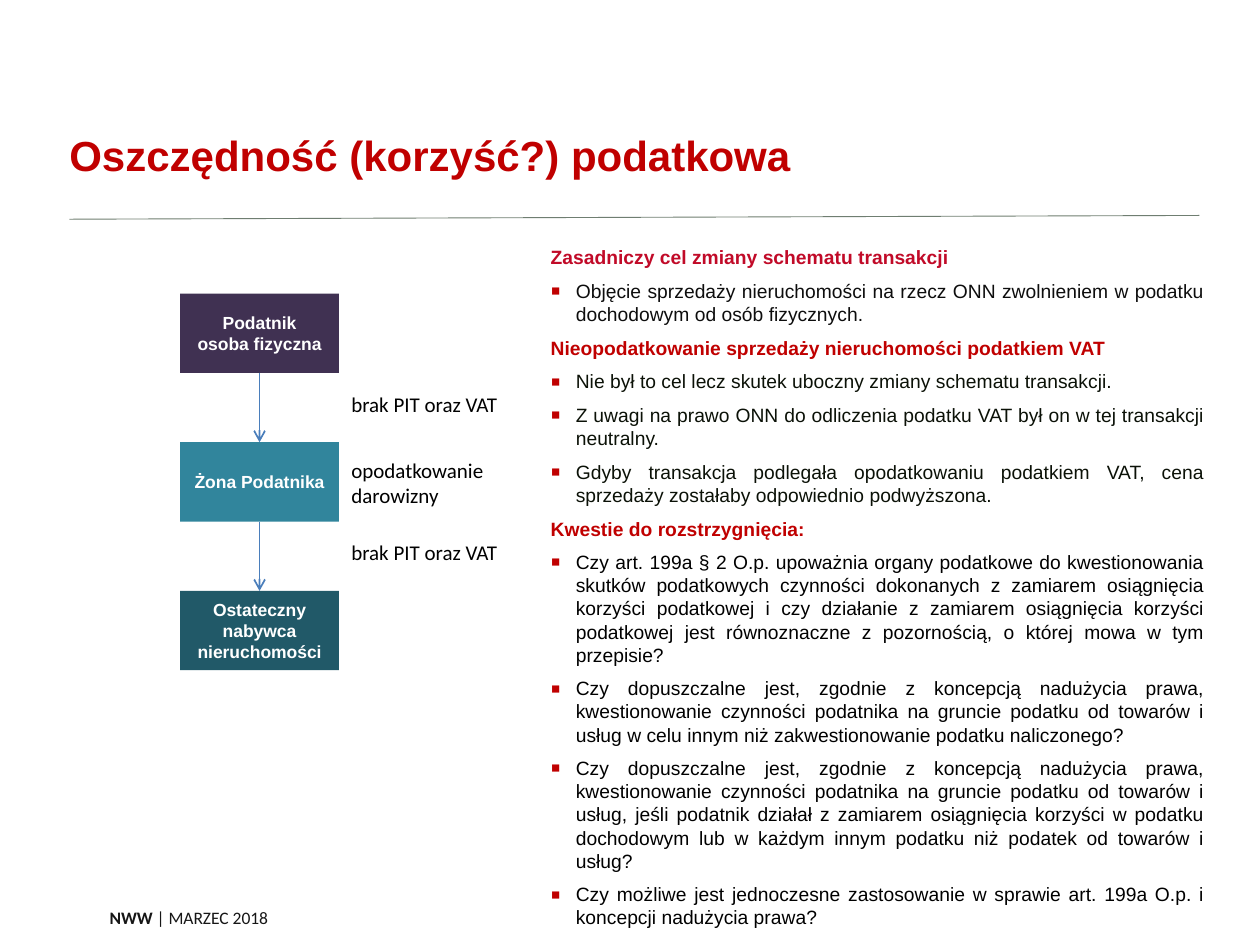
import pptx
import pptx.util
import pptx.dml.color
import pptx.enum.shapes
import pptx.enum.text
import pptx.oxml
import pptx.oxml.ns

Inches = pptx.util.Inches
Pt = pptx.util.Pt
RGB = pptx.dml.color.RGBColor
ALIGN = pptx.enum.text.PP_ALIGN
ANCHOR = pptx.enum.text.MSO_ANCHOR
FIT = pptx.enum.text.MSO_AUTO_SIZE

RED = RGB(0xC0, 0x00, 0x00)
CRIMSON = RGB(0xC1, 0x0A, 0x28)
BLACK = RGB(0x00, 0x00, 0x00)
SOOT = RGB(0x0D, 0x0D, 0x0D)
MOSS = RGB(0x0B, 0x11, 0x07)
INK = RGB(0x16, 0x16, 0x16)
WHITE = RGB(0xFF, 0xFF, 0xFF)
GREY = RGB(0x6F, 0x7E, 0x71)
BLUE = RGB(0x4A, 0x7E, 0xBB)
PLUM = RGB(0x40, 0x31, 0x52)
TEAL = RGB(0x31, 0x85, 0x9C)
PETROL = RGB(0x21, 0x59, 0x68)

HEAD = {"name": "Arial", "size": Pt(24), "bold": True}
TOPIC = {"name": "Arial", "size": Pt(11), "bold": True}
ITEM = {"name": "Arial", "size": Pt(11), "bold": False}
NODE = {"name": "Arial", "size": Pt(10), "bold": True}
LABEL = {"name": "Calibri", "size": Pt(12), "bold": False}
FOOT = {"name": "Calibri", "size": Pt(10), "bold": False}
BARE = {"margin_left": 0, "margin_right": 0, "margin_top": 0, "margin_bottom": 0}
FLAT = {"word_wrap": True, "auto_size": FIT.NONE, "vertical_anchor": ANCHOR.TOP}

# Each topic: heading, heading colour, item colour, items
TOPICS = [
    ("Zasadniczy cel zmiany schematu transakcji", CRIMSON, SOOT, [
        "Objęcie sprzedaży nieruchomości na rzecz ONN zwolnieniem w podatku "
        "dochodowym od osób fizycznych."]),
    ("Nieopodatkowanie sprzedaży nieruchomości podatkiem VAT", RED, MOSS, [
        "Nie był to cel lecz skutek uboczny zmiany schematu transakcji.",
        "Z uwagi na prawo ONN do odliczenia podatku VAT był on w tej transakcji "
        "neutralny.",
        "Gdyby transakcja podlegała opodatkowaniu podatkiem VAT, cena sprzedaży "
        "zostałaby odpowiednio podwyższona."]),
    ("Kwestie do rozstrzygnięcia:", RED, BLACK, [
        "Czy art. 199a § 2 O.p. upoważnia organy podatkowe do kwestionowania skutków "
        "podatkowych czynności dokonanych z zamiarem osiągnięcia korzyści podatkowej "
        "i czy działanie z zamiarem osiągnięcia korzyści podatkowej jest równoznaczne "
        "z pozornością, o której mowa w tym przepisie?",
        "Czy dopuszczalne jest, zgodnie z koncepcją nadużycia prawa, kwestionowanie "
        "czynności podatnika na gruncie podatku od towarów i usług w celu innym niż "
        "zakwestionowanie podatku naliczonego?",
        "Czy dopuszczalne jest, zgodnie z koncepcją nadużycia prawa, kwestionowanie "
        "czynności podatnika na gruncie podatku od towarów i usług, jeśli podatnik "
        "działał z zamiarem osiągnięcia korzyści w podatku dochodowym lub w każdym "
        "innym podatku niż podatek od towarów i usług?",
        "Czy możliwe jest jednoczesne zastosowanie w sprawie art. 199a O.p. i "
        "koncepcji nadużycia prawa?"]),
]
NODES = [("Podatnik\nosoba fizyczna", PLUM), ("Żona Podatnika", TEAL),
         ("Ostateczny nabywca nieruchomości", PETROL)]
# Each label: offset from the chart top, width, height, text
LABELS = [(0.73, 1.64, 0.3, "brak PIT oraz VAT"),
          (1.25, 1.43, 0.5, "opodatkowanie darowizny"),
          (1.9, 1.64, 0.3, "brak PIT oraz VAT")]


def dress(part, form):
    for key, val in form.items():
        setattr(part, key, val)


def place(shape, box):
    keys = ("left", "top", "width", "height")
    dress(shape, dict(zip(keys, map(Inches, box))))


def write(para, text, form, color):
    run = para.add_run()
    run.text = text
    dress(run.font, form)
    run.font.color.rgb = color


def node(parent, tag, **attrs):
    """Append a drawing element to parent."""
    item = pptx.oxml.parse_xml(f"<a:{tag} {pptx.oxml.ns.nsdecls('a')}/>")
    for key, val in attrs.items():
        item.set(key, val)
    parent.append(item)
    return item


def rule(slide, ends, color, width, arrow=False):
    kind = pptx.enum.shapes.MSO_CONNECTOR.STRAIGHT
    line = slide.shapes.add_connector(kind, *map(Inches, ends))
    line.line.color.rgb = color
    line.line.width = Pt(width)
    if arrow:
        node(line.line._get_or_add_ln(), "tailEnd", type="arrow")
    node(line._element.spPr, "effectLst")


def label(slide, box, runs, frame=None):
    """Add a text box; runs holds (text, form, color)."""
    text = slide.shapes.add_textbox(*map(Inches, box)).text_frame
    dress(text, {**FLAT, **(frame or {})})
    for part in runs:
        write(text.paragraphs[0], *part)


def title(slide, box):
    shape = slide.shapes.title
    place(shape, box)
    dress(shape.text_frame, {**FLAT, **BARE})
    para = shape.text_frame.paragraphs[0]
    para.alignment = ALIGN.LEFT
    write(para, "Oszczędność (korzyść?) podatkowa", HEAD, RED)


def bullet(para, on):
    prop = para._p.get_or_add_pPr()
    step = Inches(0.2) if on else 0
    prop.set("marL", str(step))
    prop.set("indent", str(-step))
    if on:
        node(node(prop, "buClr"), "srgbClr", val=str(RED))
        node(prop, "buSzPct", val="150000")
        node(prop, "buFont", typeface="Arial")
        node(prop, "buChar", char="▪")
    else:
        node(prop, "buNone")


def body(slide, box):
    shape = slide.placeholders[1]
    place(shape, box)
    frame = shape.text_frame
    dress(frame, FLAT)
    rows = []
    for head, tone, ink, items in TOPICS:
        rows.append((head, TOPIC, tone))
        rows += [(item, ITEM, ink) for item in items]
    for i, row in enumerate(rows):
        para = frame.add_paragraph() if i else frame.paragraphs[0]
        dress(para, {"alignment": ALIGN.JUSTIFY, "space_before": Pt(0),
                     "space_after": Pt(6)})
        bullet(para, row[1] is ITEM)
        write(para, *row)


def flow(slide, box):
    """Stack the nodes evenly, join them and label the steps on the right."""
    left, top, width, height = box
    tall = 0.63
    step = (height - tall) / (len(NODES) - 1)
    mid = left + width / 2
    for i, (text, fill) in enumerate(NODES):
        y = top + i * step
        shape = slide.shapes.add_shape(pptx.enum.shapes.MSO_SHAPE.RECTANGLE,
                                       *map(Inches, (left, y, width, tall)))
        shape.shadow.inherit = False
        shape.fill.solid()
        shape.fill.fore_color.rgb = fill
        shape.line.fill.background()
        frame = shape.text_frame
        dress(frame, {"word_wrap": True, "vertical_anchor": ANCHOR.MIDDLE})
        for j, line in enumerate(text.split("\n")):
            para = frame.add_paragraph() if j else frame.paragraphs[0]
            para.alignment = ALIGN.CENTER
            write(para, line, NODE, WHITE)
        if i:
            rule(slide, (mid, y - step + tall, mid, y), BLUE, 1, True)
    for drop, wide, high, text in LABELS:
        label(slide, (left + width, top + drop, wide, high), [(text, LABEL, BLACK)])


def footer(slide, box):
    label(slide, box, [("NWW ", {**FOOT, "bold": True}, INK),
                       ("| MARZEC 2018", FOOT, INK)], BARE)


def main():
    deck = pptx.Presentation()
    dress(deck, {"slide_width": Inches(10), "slide_height": Inches(7.5)})
    slide = deck.slides.add_slide(deck.slide_layouts[1])
    body(slide, (4.27, 1.9, 5.39, 5.57))
    rule(slide, (0.55, 1.74, 9.52, 1.71), GREY, 0.5)
    title(slide, (0.55, 1.03, 9.24, 0.4))
    flow(slide, (1.43, 2.33, 1.26, 2.99))
    footer(slide, (0.87, 7.2, 3.94, 0.2))
    deck.save("out.pptx")


if __name__ == "__main__":
    main()
